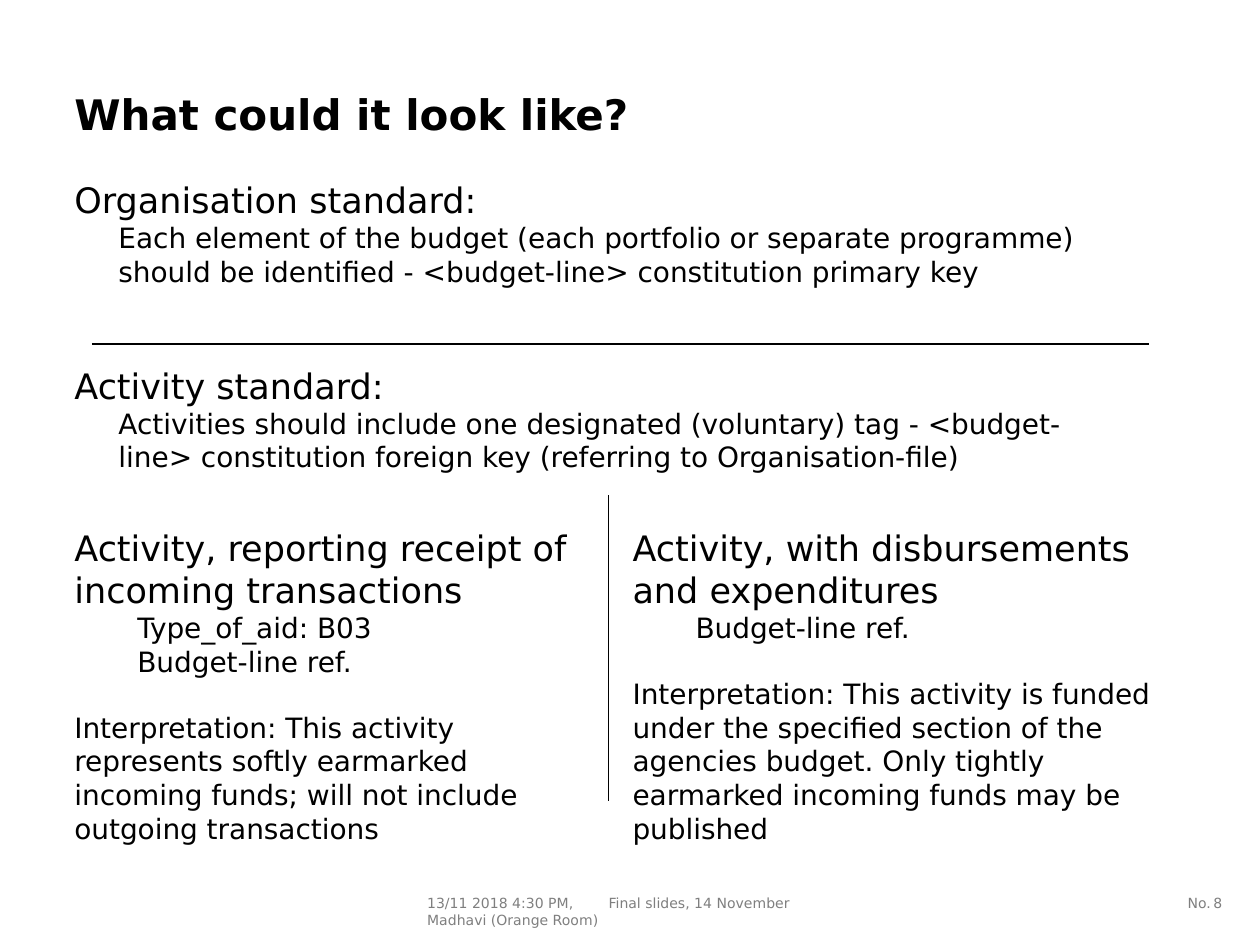
from pptx import Presentation
from pptx.dml.color import RGBColor as Rgb
from pptx.enum.shapes import MSO_CONNECTOR as Conn
from pptx.enum.text import MSO_ANCHOR as Anchor, MSO_AUTO_SIZE as Auto, PP_ALIGN as Align
from pptx.oxml.ns import qn
from pptx.util import Inches, Pt
from lxml import etree

COLORS = {"ink": "000000", "foot": "7F7F7F"}
FONT = "DejaVu Sans"
GAP = 18.6  # one line of 16 pt text

prs = Presentation()
prs.slide_width, prs.slide_height = Inches(10), Inches(7.5)
slide = prs.slides.add_slide(prs.slide_layouts[1])


def place(shape, box):
    """Move a text shape and clear its margins."""
    shape.left, shape.top, shape.width, shape.height = map(Inches, box)
    frame = shape.text_frame
    frame.margin_left = frame.margin_right = 0
    frame.margin_top = frame.margin_bottom = 0
    frame.word_wrap = True
    frame.auto_size = Auto.NONE
    frame.vertical_anchor = Anchor.TOP
    return frame


def write(frame, rows, color="ink", bold=False, align=Align.LEFT):
    """Fill a frame with rows of text, size, indent and space before."""
    for i, (text, size, indent, before) in enumerate(rows):
        para = frame.paragraphs[0] if i == 0 else frame.add_paragraph()
        para.text = text
        props = para._p.get_or_add_pPr()
        props.set("marL", str(Inches(indent)))
        props.set("indent", "0")
        etree.SubElement(props, qn("a:buNone"))
        para.alignment = align
        para.space_before = Pt(before)
        for run in para.runs:
            font = run.font
            font.name, font.size, font.bold = FONT, Pt(size), bold
            font.color.rgb = Rgb.from_string(COLORS[color])


# Title and first standard
write(place(slide.shapes.title, (0.59, 0.7, 8.68, 0.56)),
      [("What could it look like?", 24, 0, 0)], bold=True)
write(place(slide.placeholders[1], (0.59, 1.42, 8.68, 1.2)), [
    ("Organisation standard:", 20, 0, 0),
    ("Each element of the budget (each portfolio or separate programme) "
     "should be identified - <budget-line> constitution primary key", 16, 0.35, 0),
])

# Second standard and the two kinds of activity
blocks = [
    ((0.59, 2.89, 8.19, 0.88), [
        ("Activity standard:", 20, 0, 0),
        ("Activities should include one designated (voluntary) tag - <budget-line> "
         "constitution foreign key (referring to Organisation-file)", 16, 0.35, 0),
    ]),
    ((0.59, 4.18, 4.09, 2.56), [
        ("Activity, reporting receipt of incoming transactions", 20, 0, 0),
        ("Type_of_aid: B03", 16, 0.5, 0),
        ("Budget-line ref.", 16, 0.5, 0),
        ("Interpretation: This activity represents softly earmarked incoming "
         "funds; will not include outgoing transactions", 16, 0, GAP),
    ]),
    ((5.02, 4.18, 4.39, 2.56), [
        ("Activity, with disbursements and expenditures", 20, 0, 0),
        ("Budget-line ref.", 16, 0.5, 0),
        ("Interpretation: This activity is funded under the specified section of "
         "the agencies budget. Only tightly earmarked incoming funds may be "
         "published", 16, 0, GAP),
    ]),
]
for box, rows in blocks:
    write(place(slide.shapes.add_textbox(0, 0, 0, 0), box), rows)

# Dividing lines
for ends in [(0.73, 2.73, 9.12, 2.73), (4.83, 3.93, 4.83, 6.36)]:
    rule = slide.shapes.add_connector(Conn.STRAIGHT, *map(Inches, ends))
    rule.line.color.rgb = Rgb.from_string(COLORS["ink"])
    rule.line.width = Pt(0.75)
    etree.SubElement(rule._element.spPr, qn("a:effectLst"))

# Footer
for text, left, width, align in [
    ("13/11 2018 4:30 PM, Madhavi (Orange Room)", 3.39, 1.42, Align.LEFT),
    ("Final slides, 14 November", 4.83, 4.41, Align.LEFT),
    ("No.", 9.32, 0.29, Align.RIGHT),
    ("8", 9.63, 0.43, Align.LEFT),
]:
    note = slide.shapes.add_textbox(0, 0, 0, 0)
    write(place(note, (left, 7.1, width, 0.2)), [(text, 8, 0, 0)], "foot", align=align)

prs.save("out.pptx")
